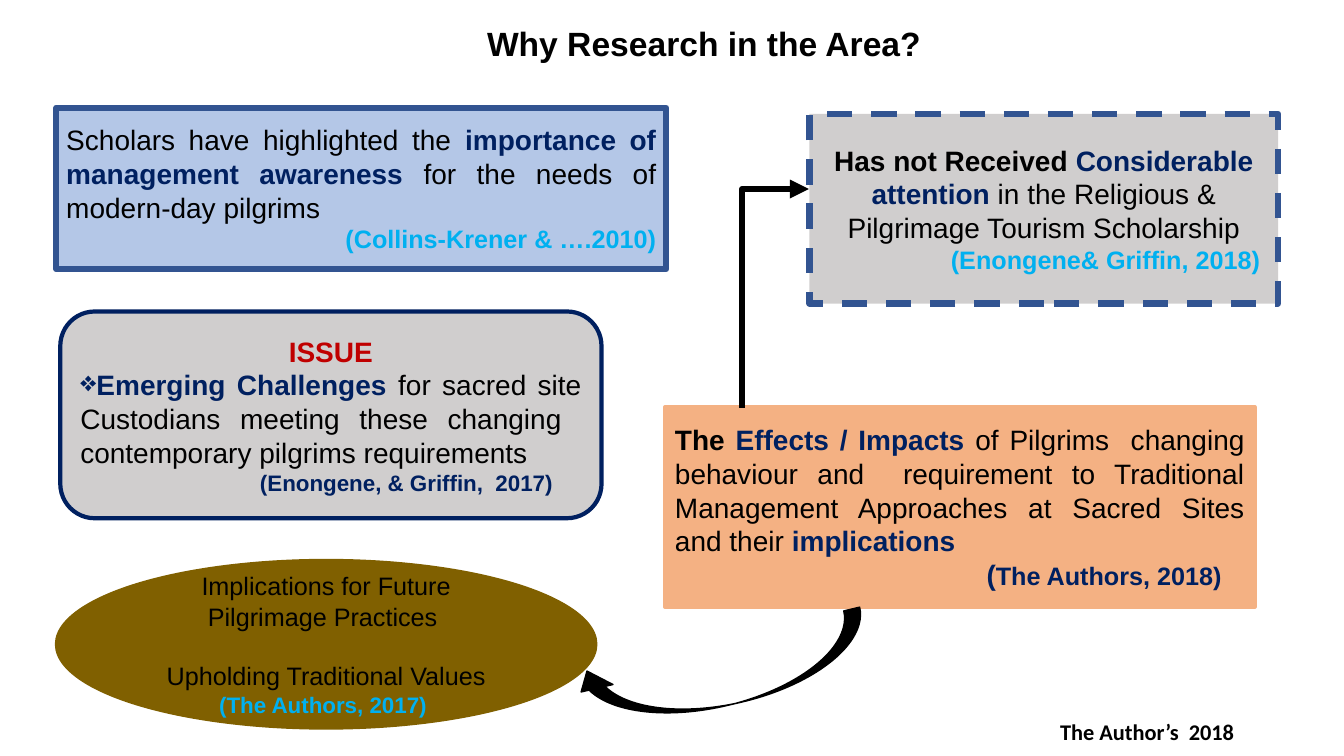
from lxml import etree
from pptx import Presentation
from pptx.dml.color import RGBColor
from pptx.enum.dml import MSO_LINE
from pptx.enum.shapes import MSO_CONNECTOR, MSO_SHAPE
from pptx.enum.text import MSO_ANCHOR, MSO_AUTO_SIZE, PP_ALIGN
from pptx.oxml.ns import qn
from pptx.util import Cm, Pt

RECT, ROUNDED, OVAL = MSO_SHAPE.RECTANGLE, MSO_SHAPE.ROUNDED_RECTANGLE, MSO_SHAPE.OVAL
CURVED_ARROW = MSO_SHAPE.CURVED_DOWN_ARROW
ELBOW = MSO_CONNECTOR.ELBOW
DASH = MSO_LINE.DASH
LEFT, CENTER, RIGHT, JUSTIFY = PP_ALIGN.LEFT, PP_ALIGN.CENTER, PP_ALIGN.RIGHT, PP_ALIGN.JUSTIFY
TOP, MIDDLE = MSO_ANCHOR.TOP, MSO_ANCHOR.MIDDLE
NO_AUTOFIT = MSO_AUTO_SIZE.NONE
TITLE_ONLY = 5

BLACK, WHITE, NAVY, RED, SKY = "000000", "FFFFFF", "002060", "C00000", "00B0F0"
BLUE, PALE_BLUE, GRAY, ORANGE, OLIVE = "325491", "B4C7E7", "D0CECE", "F4B183", "806000"


def rgb(value):
    return RGBColor.from_string(value)


def add_text(p, text, size=20, color=BLACK, bold=False, font="Arial"):
    r = p.add_run()
    r.text = text
    r.font.name, r.font.size, r.font.bold = font, Pt(size), bold
    r.font.color.rgb = rgb(color)


def add_paragraph(tf, *runs, align=JUSTIFY, indent_right=0, before=0, bullet=None):
    """Fill the empty first paragraph or append one; runs are (text, format) pairs."""
    p = tf.paragraphs[0]
    if p.runs:
        p = tf.add_paragraph()
    p.alignment, p.space_before = align, Pt(before)
    pPr = p._p.get_or_add_pPr()
    if indent_right:
        pPr.set("marR", str(Cm(indent_right)))
    if bullet:
        etree.SubElement(pPr, qn("a:buChar")).set("char", bullet)
    for text, style in runs:
        add_text(p, text, **style)


def add_box(s, kind, box, fill, line, width=1, dash=None):
    sp = s.shapes.add_shape(kind, *map(Cm, box))
    sp.shadow.inherit = False
    sp.fill.solid()
    sp.fill.fore_color.rgb = rgb(fill)
    sp.line.color.rgb = rgb(line)
    sp.line.width = Pt(width)
    if dash:
        sp.line.dash_style = dash
    sp.text_frame.word_wrap = True
    sp.text_frame.vertical_anchor = MIDDLE
    return sp


def add_elbow_arrow(s, x1, y1, x2, y2, turn, bend):
    """Elbow between two points, rotated by turn degrees, bending at a share of its length."""
    cxn = s.shapes.add_connector(ELBOW, Cm(x1), Cm(y1), Cm(x2), Cm(y2))
    cxn.line.color.rgb = rgb(BLACK)
    cxn.line.width = Pt(4.5)
    spPr = cxn._element.spPr
    spPr.find(qn("a:xfrm")).set("rot", str(turn * 60000))
    guides = spPr.find(qn("a:prstGeom")).find(qn("a:avLst"))
    etree.SubElement(guides, qn("a:gd"), name="adj1", fmla=f"val {round(bend * 100000)}")
    etree.SubElement(spPr.find(qn("a:ln")), qn("a:tailEnd"), type="triangle")
    etree.SubElement(spPr, qn("a:effectLst"))


def add_title(s, text):
    sp = s.shapes.title
    sp.left, sp.top, sp.width, sp.height = map(Cm, (5.13, 0.46, 25.22, 1.27))
    tf = sp.text_frame
    tf.word_wrap, tf.auto_size, tf.vertical_anchor = True, NO_AUTOFIT, TOP
    add_paragraph(tf, (text, dict(size=24, bold=True)), align=CENTER)


def main():
    prs = Presentation()
    prs.slide_width, prs.slide_height = Cm(33.87), Cm(19.05)
    s = prs.slides.add_slide(prs.slide_layouts[TITLE_ONLY])
    plain, strong = {}, dict(bold=True)
    navy = dict(color=NAVY, bold=True)
    cite = dict(size=18, color=SKY, bold=True)

    add_title(s, "Why Research in the Area?")

    tf = add_box(s, RECT, (1.42, 2.72, 15.37, 4.06), PALE_BLUE, BLUE, 4.5).text_frame
    add_paragraph(tf, ("Scholars have highlighted the ", plain),
                  ("importance of management awareness ", navy),
                  ("for the needs of modern-day pilgrims", plain))
    add_paragraph(tf, ("(Collins-Krener & ….2010)", cite), align=RIGHT)

    tf = add_box(s, RECT, (16.76, 10.26, 14.86, 5.03), ORANGE, ORANGE, 3).text_frame
    add_paragraph(tf, ("The ", strong), ("Effects / Impacts ", navy),
                  ("of Pilgrims  changing behaviour and  requirement to Traditional "
                   "Management Approaches at Sacred Sites and their", plain),
                  (" implications", navy))
    add_paragraph(tf, ("(", navy), ("The Authors, 2018)", dict(navy, size=18)),
                  align=RIGHT, indent_right=0.58)

    add_elbow_arrow(s, 22.3, 8.36, 16.79, 6.68, turn=90, bend=1)

    tf = add_box(s, RECT, (20.4, 2.87, 11.81, 4.78), GRAY, BLUE, 4.5, DASH).text_frame
    add_paragraph(tf, ("Has not Received ", strong), ("Considerable attention ", navy),
                  ("in the Religious & Pilgrimage Tourism Scholarship", plain), align=CENTER)
    add_paragraph(tf, ("(Enongene& Griffin, 2018)", cite), align=RIGHT, indent_right=0.2)

    tf = add_box(s, OVAL, (1.4, 14.1, 13.64, 4.27), OLIVE, OLIVE).text_frame
    small = dict(size=18)
    add_paragraph(tf, ("Implications for Future Pilgrimage Practices ", small), align=CENTER)
    add_paragraph(tf, ("Upholding Traditional Values", small), align=CENTER, before=21)
    add_paragraph(tf, ("(The Authors, 2017) ", dict(cite, size=16)), align=CENTER)

    arrow = add_box(s, CURVED_ARROW, (14.48, 16.13, 7.47, 1.65), BLACK, BLACK)
    arrow.rotation = 166.8
    for i, value in enumerate((0.25, 0.5, 0.29)):
        arrow.adjustments[i] = value

    tf = add_box(s, ROUNDED, (1.52, 7.85, 13.64, 5.21), GRAY, NAVY, 3).text_frame
    add_paragraph(tf, ("ISSUE", dict(color=RED, bold=True)), align=CENTER)
    add_paragraph(tf, ("Emerging Challenges", navy),
                  (" for sacred site Custodians meeting these changing  "
                   "contemporary pilgrims requirements", plain), bullet="❖")
    add_paragraph(tf, ("(Enongene, & Griffin,  2017)", dict(navy, size=16)),
                  align=RIGHT, indent_right=0.72)

    tf = add_box(s, RECT, (26.19, 18.16, 5.44, 0.56), WHITE, WHITE).text_frame
    add_paragraph(tf, ("The Author’s  2018", dict(size=16, bold=True, font="Calibri")),
                  align=CENTER)

    prs.save("out.pptx")


if __name__ == "__main__":
    main()
